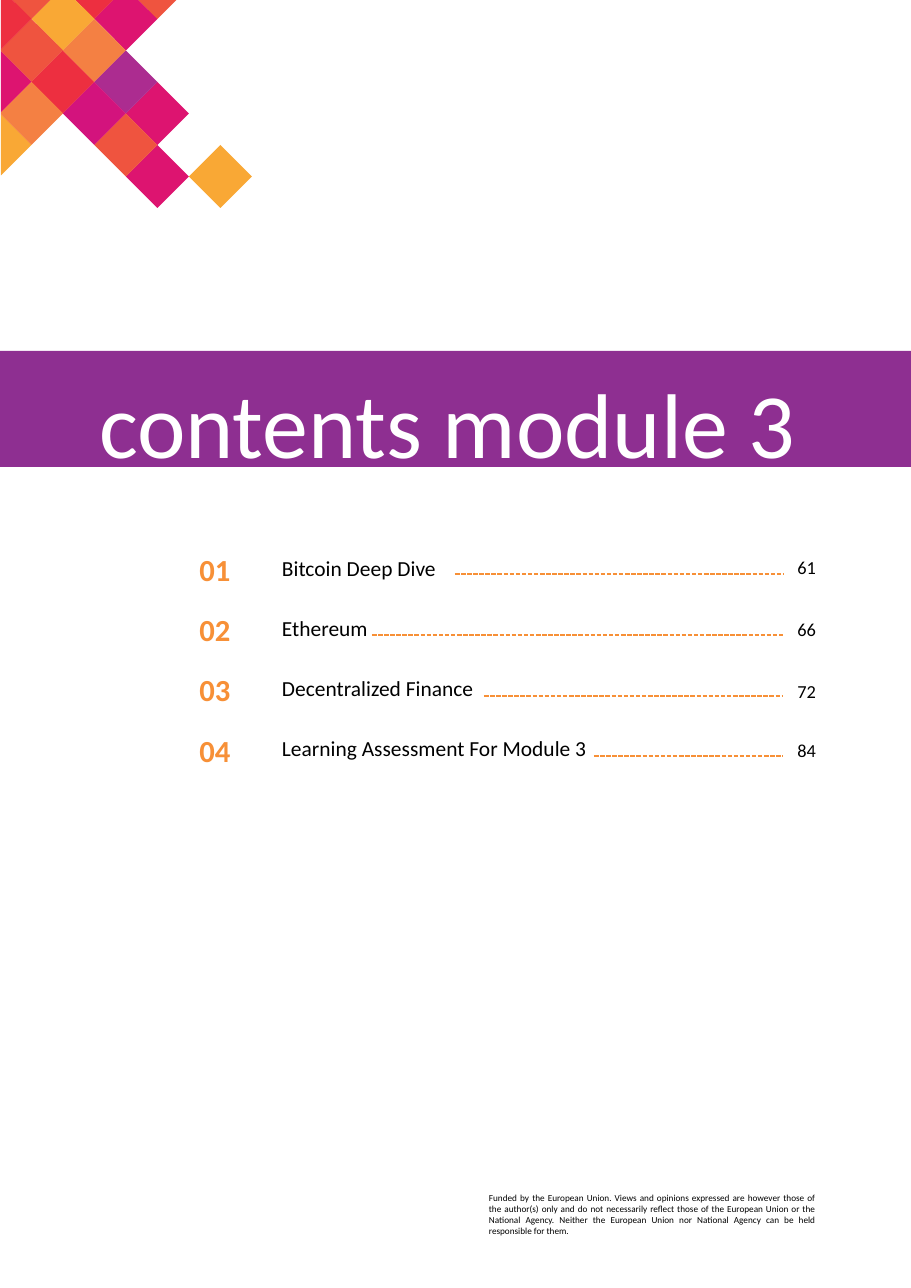
from lxml.etree import SubElement
from pptx import Presentation
from pptx.dml.color import RGBColor
from pptx.enum.dml import MSO_LINE
from pptx.enum.shapes import MSO_CONNECTOR, MSO_SHAPE
from pptx.enum.text import MSO_ANCHOR, MSO_AUTO_SIZE, PP_ALIGN
from pptx.oxml.ns import qn
from pptx.util import Pt

PX = 8298
FONT = "Calibri"
WHITE = RGBColor(0xFF, 0xFF, 0xFF)
BLACK = RGBColor(0x00, 0x00, 0x00)
PURPLE = RGBColor(0x8E, 0x2F, 0x91)
ORANGE = RGBColor(0xF7, 0x90, 0x37)
RED = RGBColor(0xED, 0x2F, 0x40)
CORAL = RGBColor(0xEF, 0x54, 0x3F)
APRICOT = RGBColor(0xF4, 0x80, 0x43)
AMBER = RGBColor(0xF9, 0xA8, 0x35)
PINK = RGBColor(0xDD, 0x14, 0x70)
MAGENTA = RGBColor(0xD3, 0x13, 0x7D)
VIOLET = RGBColor(0xAC, 0x2C, 0x90)

DIAMOND = 63
MOSAIC_TOP = 19
MOSAIC = [
    (3, -1, RED), (4, 0, PINK), (5, -1, CORAL), (2, 0, AMBER),
    (1, 1, CORAL), (2, 2, RED), (3, 1, APRICOT), (0, 2, PINK),
    (0, 4, AMBER), (1, 3, APRICOT), (7, 5, AMBER), (5, 5, PINK),
    (5, 3, PINK), (4, 2, VIOLET), (3, 3, MAGENTA), (4, 4, CORAL),
    (1, -1, CORAL), (0, 0, RED),
]

ROW_PITCH = Pt(39.4)
LEADER_END = 783
CHAPTERS = [
    ("01", "Bitcoin Deep Dive", "61", 455, 574, 567),
    ("02", "Ethereum", "66", 372, 635, 629),
    ("03", "Decentralized Finance", "72", 484, 696, 691),
    ("04", "Learning Assessment For Module 3", "84", 594, 756, 750),
]
DISCLAIMER = (
    "Funded by the European Union. Views and opinions expressed are however "
    "those of the author(s) only and do not necessarily reflect those of the "
    "European Union or the National Agency. Neither the European Union nor "
    "National Agency can be held responsible for them."
)


def write(holder, lines, size, color, bold=False, align=PP_ALIGN.LEFT,
          anchor=MSO_ANCHOR.TOP, spacing=None):
    frame = holder.text_frame
    frame.word_wrap = True
    frame.auto_size = MSO_AUTO_SIZE.NONE
    frame.vertical_anchor = anchor
    frame.margin_left = frame.margin_right = 0
    frame.margin_top = frame.margin_bottom = 0
    frame.text = "\n".join(lines)
    for paragraph in frame.paragraphs:
        paragraph.alignment = align
        paragraph.space_before = Pt(0)
        paragraph.line_spacing = spacing
        paragraph.font.name = FONT
        paragraph.font.size = Pt(size)
        paragraph.font.bold = bold
        paragraph.font.color.rgb = color


def place(holder, left, top, width, height):
    holder.left, holder.top = left * PX, top * PX
    holder.width, holder.height = width * PX, height * PX


def write_column(column, entries, size, color, **style):
    write(column, entries, size, color, spacing=ROW_PITCH, **style)
    for paragraph in column.text_frame.paragraphs:
        properties = paragraph._p.get_or_add_pPr()
        properties.set("marL", "0")
        properties.set("indent", "0")
        properties.insert_element_before(
            properties.makeelement(qn("a:buNone")), "a:tabLst", "a:defRPr")


def add_note(slide, text, box, size, **style):
    note = slide.shapes.add_textbox(*(length * PX for length in box))
    write(note, [text], size, BLACK, **style)


def paint(shape, color):
    shape.shadow.inherit = False
    shape.fill.solid()
    shape.fill.fore_color.rgb = color
    shape.line.fill.background()


def add_band(slide, top, height):
    band = slide.shapes.add_shape(
        MSO_SHAPE.RECTANGLE, 0, top * PX, 911 * PX, height * PX)
    paint(band, PURPLE)
    slide.shapes.title.element.addprevious(band.element)


def clip(corners, axis, limit):
    kept = []
    for start, end in zip(corners, corners[1:] + corners[:1]):
        if start[axis] >= limit:
            kept.append(start)
        if (start[axis] < limit) != (end[axis] < limit):
            share = (limit - start[axis]) / (end[axis] - start[axis])
            kept.append(tuple(a + share * (b - a) for a, b in zip(start, end)))
    return kept


def add_diamond(slide, column, row, color):
    half = DIAMOND / 2
    x, y = column * half, MOSAIC_TOP + row * half
    corners = [(x, y - half), (x + half, y), (x, y + half), (x - half, y)]
    corners = clip(clip(corners, 0, 1), 1, 0)
    outline = [(round(a * PX), round(b * PX)) for a, b in corners]
    builder = slide.shapes.build_freeform(*outline[0])
    builder.add_line_segments(outline[1:], close=True)
    paint(builder.convert_to_shape(), color)


def add_leader(slide, start, y):
    leader = slide.shapes.add_connector(
        MSO_CONNECTOR.STRAIGHT, start * PX, y * PX, LEADER_END * PX, y * PX)
    leader.line.color.rgb = ORANGE
    leader.line.width = Pt(1)
    leader.line.dash_style = MSO_LINE.SQUARE_DOT
    SubElement(leader.element.spPr, qn("a:effectLst"))


def main():
    deck = Presentation()
    deck.slide_width, deck.slide_height = 911 * PX, 1288 * PX
    slide = deck.slides.add_slide(deck.slide_layouts[3])
    title, numbers, topics = slide.placeholders

    add_band(slide, 351, 116)
    place(title, 99, 367, 760, 112)
    write(title, ["contents module 3"], 60, WHITE)

    place(numbers, 176, 527, 78, 242)
    write_column(numbers, [chapter[0] for chapter in CHAPTERS], 20, ORANGE,
                 bold=True, align=PP_ALIGN.CENTER)
    place(topics, 282, 520, 400, 242)
    write_column(topics, [chapter[1] for chapter in CHAPTERS], 14, BLACK)

    for _, _, page, leader_start, leader_y, page_y in CHAPTERS:
        add_leader(slide, leader_start, leader_y)
        add_note(slide, page, (772, page_y - 21, 44, 42), 12,
                 align=PP_ALIGN.RIGHT, anchor=MSO_ANCHOR.MIDDLE)

    for column, row, color in MOSAIC:
        add_diamond(slide, column, row, color)

    add_note(slide, DISCLAIMER, (489, 1192, 326, 45), 6,
             align=PP_ALIGN.JUSTIFY)
    deck.save("out.pptx")


if __name__ == "__main__":
    main()
